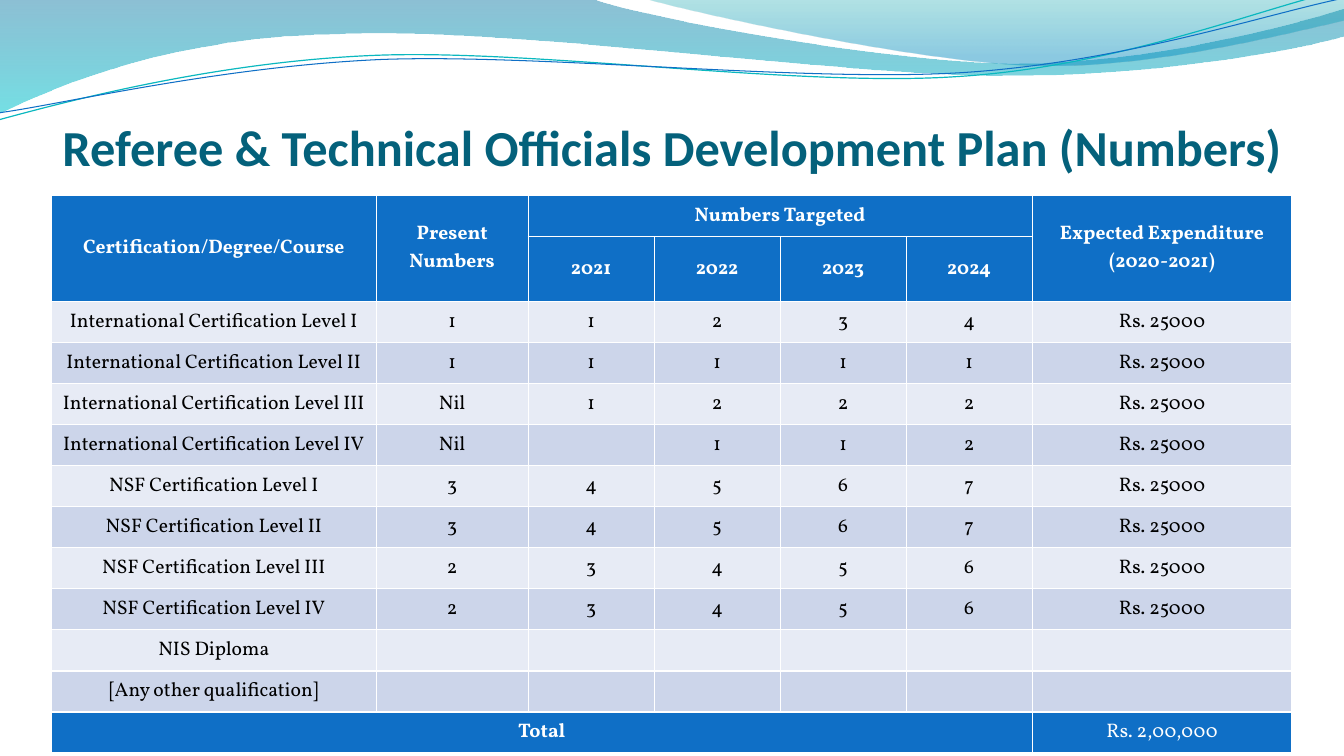
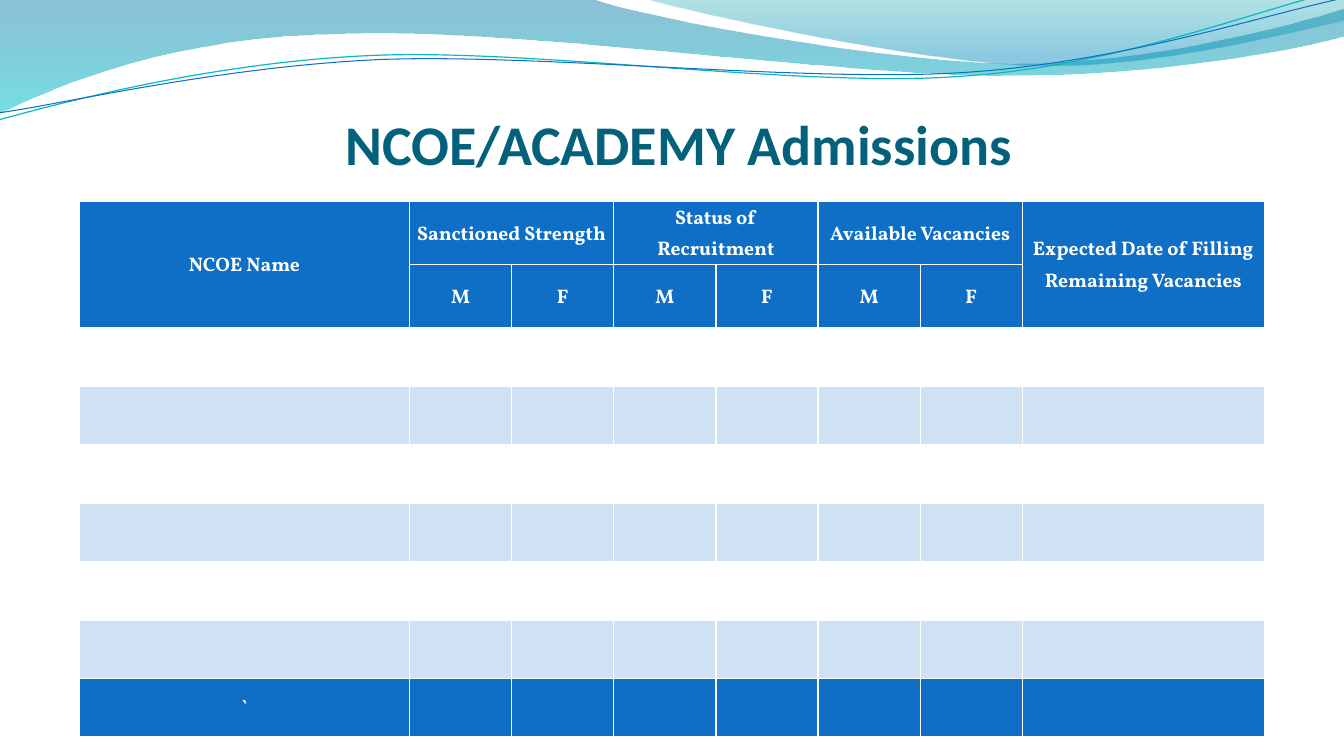
from dataclasses import dataclass

from lxml.etree import SubElement
from pptx import Presentation
from pptx.dml.color import RGBColor as RGB
from pptx.enum.text import MSO_ANCHOR as ANCHOR, MSO_AUTO_SIZE as AUTO, PP_ALIGN as ALIGN
from pptx.oxml.ns import qn
from pptx.util import Cm, Pt


@dataclass(frozen=True)
class Theme:
    title: str = "04617B"
    blue: str = "0F6FC6"
    teal: str = "0AB8BF"
    white: str = "FFFFFF"
    black: str = "000000"
    bands: tuple = (("E7EBF5", 100), ("CCD5EA", 100))
    pale_bands: tuple = (None, ("0F6FC6", 20))
    wave_stops: tuple = ((0, "0074A1", 45), (1, "00C6CF", 55))
    crest_stops: tuple = ((0, "00A1A9", 30), (0.8, "008BBF", 45))
    title_font: str = "Calibri"
    table_font: str = "Vollkorn"
    title_size: int = 40
    long_title_size: int = 36
    table_size: int = 14


WAVE = [(0, 0), (14.91, -0.03),
        (16.1, 0.43, 22.48, 1.6, 25.68, 1.6), (28.91, 1.6, 32.46, 0.66, 33.86, 0.23),
        (33.91, 0.91),
        (33.3, 1.12, 29.46, 1.93, 25.25, 1.91), (21.06, 1.91, 12.93, 0.71, 8.71, 0.86),
        (4.37, 0.91, 1.55, 2.11, -0.03, 2.87), (0, 0)]
CREST = [(16.23, -0.03), (17.25, 0.28, 23.09, 1.57, 26.04, 1.65),
         (28.98, 1.75, 32.56, 0.81, 33.86, 0.53), (33.86, 0), (16.23, -0.03)]
TEAL_CURVE = [(-0.03, 3.02), (1.63, 2.57, 5.36, 1.57, 9.37, 1.4),
              (13.39, 1.22, 20.07, 2.21, 24.13, 1.93), (28.19, 1.68, 31.8, 0.2, 33.81, -0.25)]
BLUE_CURVE = [(0, 2.84), (1.6, 2.62, 5.54, 1.68, 9.6, 1.5),
              (13.64, 1.35, 20.22, 2.08, 24.26, 1.83), (28.32, 1.57, 31.88, 0.36, 33.88, -0.05)]


class Deck:
    """Builds styled slides one at a time on a shared wave master."""

    def __init__(self, theme):
        self.theme = theme
        self.prs = Presentation()
        self.prs.slide_width, self.prs.slide_height = Cm(33.87), Cm(19.05)
        self.slide = None

    def add_slide(self, title, size, indent=0):
        first = self.slide is None
        self.slide = self.prs.slides.add_slide(self.prs.slide_layouts[5])
        if first:
            self.add_waves()
        sp = self.slide.shapes.title
        sp.left, sp.top, sp.width, sp.height = Cm(1.3), Cm(1.96), Cm(31.29), Cm(2.49)
        tf = sp.text_frame
        tf.text = title
        tf.word_wrap, tf.auto_size = True, AUTO.NONE
        tf.vertical_anchor = ANCHOR.BOTTOM
        tf.margin_left, tf.margin_top = Cm(indent), Cm(0.13)
        tf.margin_right = tf.margin_bottom = 0
        t = self.theme
        self.style(tf.paragraphs[0], t.title_font, size, t.title, True)

    def add_waves(self):
        t = self.theme
        shapes = [self.wave(WAVE, t.wave_stops), self.wave(CREST, t.crest_stops),
                  self.curve(TEAL_CURVE, t.teal, 0.85), self.curve(BLUE_CURVE, t.blue, 0.75)]
        tree = self.prs.slide_master.shapes.element
        for i, sp in enumerate(shapes):
            sp.element.xpath(".//p:cNvPr")[0].set("id", str(20 + i))
            tree.insert(2 + i, sp.element)

    def outline(self, segments, close):
        start, *rest = segments
        points = [seg[i:i + 2] for seg in rest for i in range(0, len(seg), 2)]
        builder = self.slide.shapes.build_freeform(Cm(start[0]), Cm(start[1]), scale=1.0)
        builder.add_line_segments([(Cm(x), Cm(y)) for x, y in points], close=close)
        sp = builder.convert_to_shape()
        sp.shadow.inherit = False
        lines = iter(list(sp.element.iter(qn("a:lnTo"))))
        for seg in rest:
            steps = [next(lines) for _ in range(len(seg) // 2)]
            if len(steps) == 3:
                self.bend(steps)
        return sp

    def bend(self, steps):
        outline = steps[0].getparent()
        bezier = SubElement(outline, qn("a:cubicBezTo"))
        steps[0].addprevious(bezier)
        for step in steps:
            bezier.append(step[0])
            outline.remove(step)

    def wave(self, segments, stops):
        sp = self.outline(segments, True)
        sp.line.fill.background()
        sp.fill.gradient()
        sp.fill.gradient_angle = 270
        for stop, (position, color, _) in zip(sp.fill.gradient_stops, stops):
            stop.position, stop.color.rgb = position, RGB.from_string(color)
        for clr, (_, _, alpha) in zip(sp.element.iter(qn("a:srgbClr")), stops):
            SubElement(clr, qn("a:alpha"), val=str(alpha * 1000))
        return sp

    def curve(self, segments, color, width):
        sp = self.outline(segments, False)
        sp.fill.background()
        sp.line.color.rgb, sp.line.width = RGB.from_string(color), Pt(width)
        return sp

    def style(self, p, font, size, color, bold):
        p.alignment = ALIGN.CENTER
        p.font.name, p.font.size, p.font.bold = font, Pt(size), bold
        p.font.color.rgb = RGB.from_string(color)

    def add_table(self, left, top, widths, heights, rows, merges, bands, spacing=1.0):
        t = self.theme
        frame = self.slide.shapes.add_table(len(rows), len(widths), Cm(left), Cm(top),
                                            Cm(sum(widths)), Cm(sum(heights)))
        table = frame.table
        table.horz_banding = False
        for col, width in zip(table.columns, widths):
            col.width = Cm(width)
        for row, height in zip(table.rows, heights):
            row.height = Cm(height)
        for r, texts in enumerate(rows):
            strong = r < 2 or r == len(rows) - 1
            fill = (t.blue, 100) if strong else bands[r % 2]
            color = t.white if strong else t.black
            for c, text in enumerate(texts):
                bold = strong and not text.startswith("Rs.")
                self.fill_cell(table.cell(r, c), text, fill, color, bold, spacing)
        for r1, c1, r2, c2 in merges:
            table.cell(r1, c1).merge(table.cell(r2, c2))

    def fill_cell(self, cell, text, fill, color, bold, spacing):
        t = self.theme
        cell.vertical_anchor = ANCHOR.MIDDLE
        cell.margin_left = cell.margin_right = Cm(0.13)
        cell.margin_top = cell.margin_bottom = 0
        p = cell.text_frame.paragraphs[0]
        p.text = text
        p.line_spacing = spacing
        self.style(p, t.table_font, t.table_size, color, bold)
        props = cell._tc.get_or_add_tcPr()
        for side in ("lnL", "lnR", "lnT", "lnB"):
            ln = SubElement(props, qn(f"a:{side}"), w=str(Pt(1)))
            SubElement(SubElement(ln, qn("a:solidFill")), qn("a:srgbClr"), val=t.white)
        if not fill:
            cell.fill.background()
            return
        shade, alpha = fill
        cell.fill.solid()
        cell.fill.fore_color.rgb = RGB.from_string(shade)
        if alpha < 100:
            clr = props.find(qn("a:solidFill"))[0]
            SubElement(clr, qn("a:alpha"), val=str(alpha * 1000))


def add_officials(deck):
    t = deck.theme
    deck.add_slide("Referee & Technical Officials Development Plan (Numbers)", t.long_title_size)
    counts = {
        "International Certification Level I": ["1", "1", "2", "3", "4"],
        "International Certification Level II": ["1", "1", "1", "1", "1"],
        "International Certification Level III": ["Nil", "1", "2", "2", "2"],
        "International Certification Level IV": ["Nil", "", "1", "1", "2"],
        "NSF Certification Level I": ["3", "4", "5", "6", "7"],
        "NSF Certification Level II": ["3", "4", "5", "6", "7"],
        "NSF Certification Level III": ["2", "3", "4", "5", "6"],
        "NSF Certification Level IV": ["2", "3", "4", "5", "6"],
    }
    rows = [
        ["Certification/Degree/Course", "Present Numbers", "Numbers Targeted", "", "", "",
         "Expected Expenditure\v(2020-2021)"],
        ["", "", "2021", "2022", "2023", "2024", ""],
        *([name, *values, "Rs. 25000"] for name, values in counts.items()),
        ["NIS Diploma"] + [""] * 6,
        ["[Any other qualification]"] + [""] * 6,
        ["Total"] + [""] * 5 + ["Rs. 2,00,000"],
    ]
    merges = [(0, 0, 1, 0), (0, 1, 1, 1), (0, 2, 0, 5), (0, 6, 1, 6), (12, 0, 12, 5)]
    deck.add_table(1.3, 4.93, [8.18, 3.83] + [12.7 / 4] * 4 + [6.55],
                   [1.03, 1.64] + [11.38 / 11] * 11, rows, merges, t.bands)


def add_admissions(deck):
    t = deck.theme
    deck.add_slide("NCOE/ACADEMY Admissions", t.title_size, indent=0.31)
    rows = [
        ["NCOE Name", "Sanctioned Strength", "", "Status of Recruitment", "",
         "Available Vacancies", "", "Expected Date of Filling Remaining Vacancies"],
        ["", *["M", "F"] * 3, ""],
        *([""] * 8 for _ in range(6)),
        ["`"] + [""] * 7,
    ]
    merges = [(0, 0, 1, 0), (0, 7, 1, 7)] + [(0, c, 0, c + 1) for c in (1, 3, 5)]
    deck.add_table(2, 5.08, [8.32] + [15.45 / 6] * 6 + [6.1],
                   [1.58] * 2 + [10.32 / 7] * 7, rows, merges, t.pale_bands, spacing=1.15)


def main():
    deck = Deck(Theme())
    add_officials(deck)
    add_admissions(deck)
    deck.prs.save("out.pptx")


if __name__ == "__main__":
    main()
